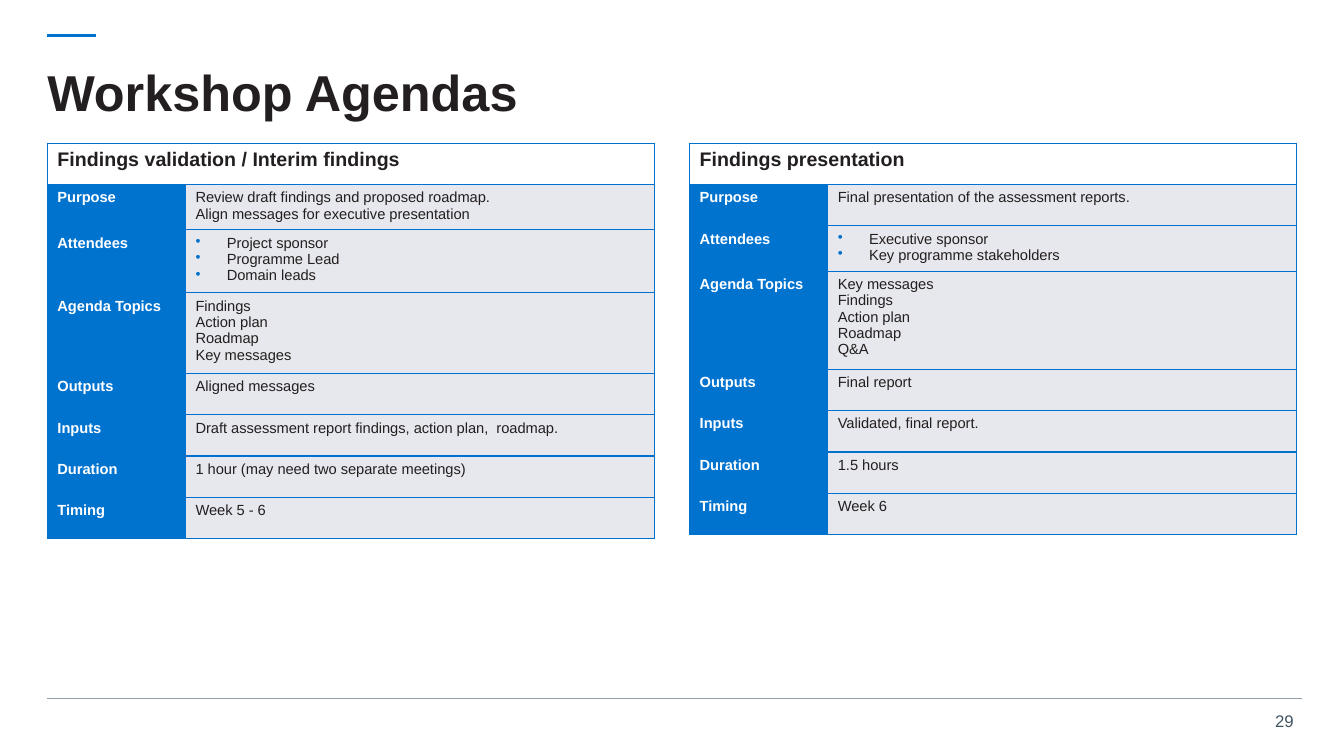
from lxml import etree
from pptx import Presentation
from pptx import util as u
from pptx.dml.color import RGBColor
from pptx.enum import shapes, text
from pptx.oxml import ns

PX = 9144
FONT = "Arial"
BLUE = RGBColor(0x00, 0x72, 0xCE)
LABEL_BLUE = RGBColor(0x00, 0x73, 0xCF)
INK = RGBColor(0x23, 0x1F, 0x20)
SLATE = RGBColor(0x42, 0x55, 0x63)
RULE_GREY = RGBColor(0x91, 0x9E, 0xA8)
CELL_GREY = RGBColor(0xE7, 0xE8, 0xED)
WHITE = RGBColor(0xFF, 0xFF, 0xFF)

ROW_NAMES = ["Purpose", "Attendees", "Agenda Topics", "Outputs", "Inputs", "Duration", "Timing"]
VALIDATION = [
    ["Review draft findings and proposed roadmap.", "Align messages for executive presentation"],
    ["Project sponsor", "Programme Lead", "Domain leads"],
    ["Findings", "Action plan", "Roadmap", "Key messages"],
    ["Aligned messages"],
    ["Draft assessment report findings, action plan,  roadmap."],
    ["1 hour (may need two separate meetings)"],
    ["Week 5 - 6"],
]
PRESENTATION = [
    ["Final presentation of the assessment reports."],
    ["Executive sponsor", "Key programme stakeholders"],
    ["Key messages", "Findings", "Action plan", "Roadmap", "Q&A"],
    ["Final report"],
    ["Validated, final report."],
    ["1.5 hours"],
    ["Week 6"],
]


def px(*lengths):
    """Turn px lengths into EMU."""
    return [u.Emu(length * PX) for length in lengths]


def add_span(para, words, size, color, bold=False):
    """Add one formatted run to a paragraph."""
    span = para.add_run()
    span.text = words
    span.font.name = FONT
    span.font.size = u.Pt(size)
    span.font.bold = bold
    span.font.color.rgb = color


def add_rule(page, left, top, width, color, weight):
    """Draw a horizontal line without a shadow."""
    rule = page.shapes.add_connector(
        shapes.MSO_CONNECTOR.STRAIGHT, *px(left, top, left + width, top))
    rule.line.color.rgb = color
    rule.line.width = u.Pt(weight)
    etree.SubElement(rule._element.spPr, ns.qn("a:effectLst"))


def add_color(parent, color):
    """Append a colour element to an XML parent."""
    etree.SubElement(parent, ns.qn("a:srgbClr"), val=str(color))


def add_bullet(para):
    """Give a paragraph a blue hanging bullet."""
    props = para._p.get_or_add_pPr()
    props.set("marL", str(31 * PX))
    props.set("indent", str(-31 * PX))
    add_color(etree.SubElement(props, ns.qn("a:buClr")), BLUE)
    etree.SubElement(props, ns.qn("a:buChar"), char="•")


def add_borders(cell):
    """Outline a cell in blue on all four sides."""
    props = cell._tc.get_or_add_tcPr()
    for index, side in enumerate(["lnL", "lnR", "lnT", "lnB"]):
        border = etree.Element(ns.qn("a:" + side), w=str(u.Pt(1)))
        add_color(etree.SubElement(border, ns.qn("a:solidFill")), BLUE)
        props.insert(index, border)


def fill_cell(cell, lines, fill, size, color, bold=False, bulleted=False):
    """Write lines of text into a coloured, bordered cell."""
    cell.fill.solid()
    cell.fill.fore_color.rgb = fill
    add_borders(cell)
    for index, line in enumerate(lines):
        frame = cell.text_frame
        para = frame.add_paragraph() if index else frame.paragraphs[0]
        if bulleted:
            add_bullet(para)
        add_span(para, line, size, color, bold)


def add_agenda(page, left, top, width, heading, entries):
    """Build one workshop agenda table."""
    label_width, row_height, line_height, padding = 137, 41, 16, 10
    heights = [row_height] + [max(row_height, len(lines) * line_height + padding) for lines in entries]
    table = page.shapes.add_table(
        len(heights), 2, *px(left, top, width, sum(heights))).table
    for column, length in zip(table.columns, px(label_width, width - label_width)):
        column.width = length
    for row, length in zip(table.rows, px(*heights)):
        row.height = length
    table.cell(0, 0).merge(table.cell(0, 1))
    fill_cell(table.cell(0, 0), [heading], WHITE, 14, INK, bold=True)
    fill_cell(table.cell(0, 1), [], WHITE, 14, INK)
    for row, (name, lines) in enumerate(zip(ROW_NAMES, entries), 1):
        fill_cell(table.cell(row, 0), [name], LABEL_BLUE, 10.5, WHITE, bold=True)
        fill_cell(table.cell(row, 1), lines, CELL_GREY, 10.5, INK, bulleted=name == "Attendees")


def add_title(page, left, top, width, height, words):
    """Place the slide title with its short accent line above."""
    add_rule(page, left, top - 12, 48, BLUE, 2)
    frame = page.shapes.add_textbox(*px(left, top, width, height)).text_frame
    frame.word_wrap = True
    frame.vertical_anchor = text.MSO_ANCHOR.MIDDLE
    frame.margin_left = frame.margin_right = frame.margin_top = frame.margin_bottom = 0
    para = frame.paragraphs[0]
    para.line_spacing = 0.9
    add_span(para, words, 36, INK, bold=True)


def add_footer(page, left, top, width, number):
    """Place the footer line and the page number below its right end."""
    add_rule(page, left, top, width, RULE_GREY, 0.75)
    box = page.shapes.add_textbox(*px(left + width - 39, top + 7, 41, 30))
    box.text_frame.word_wrap = True
    para = box.text_frame.paragraphs[0]
    para.alignment = text.PP_ALIGN.RIGHT
    add_span(para, number, 12, SLATE)


def main():
    """Build the workshop agendas slide."""
    deck = Presentation()
    deck.slide_width, deck.slide_height = px(1333, 750)
    page = deck.slides.add_slide(deck.slide_layouts[6])
    add_footer(page, 47, 693, 1244, "29")
    add_title(page, 47, 47, 1247, 95, "Workshop Agendas")
    add_agenda(page, 47, 142, 602, "Findings validation / Interim findings", VALIDATION)
    add_agenda(page, 684, 142, 602, "Findings presentation", PRESENTATION)
    deck.save("out.pptx")


if __name__ == "__main__":
    main()
